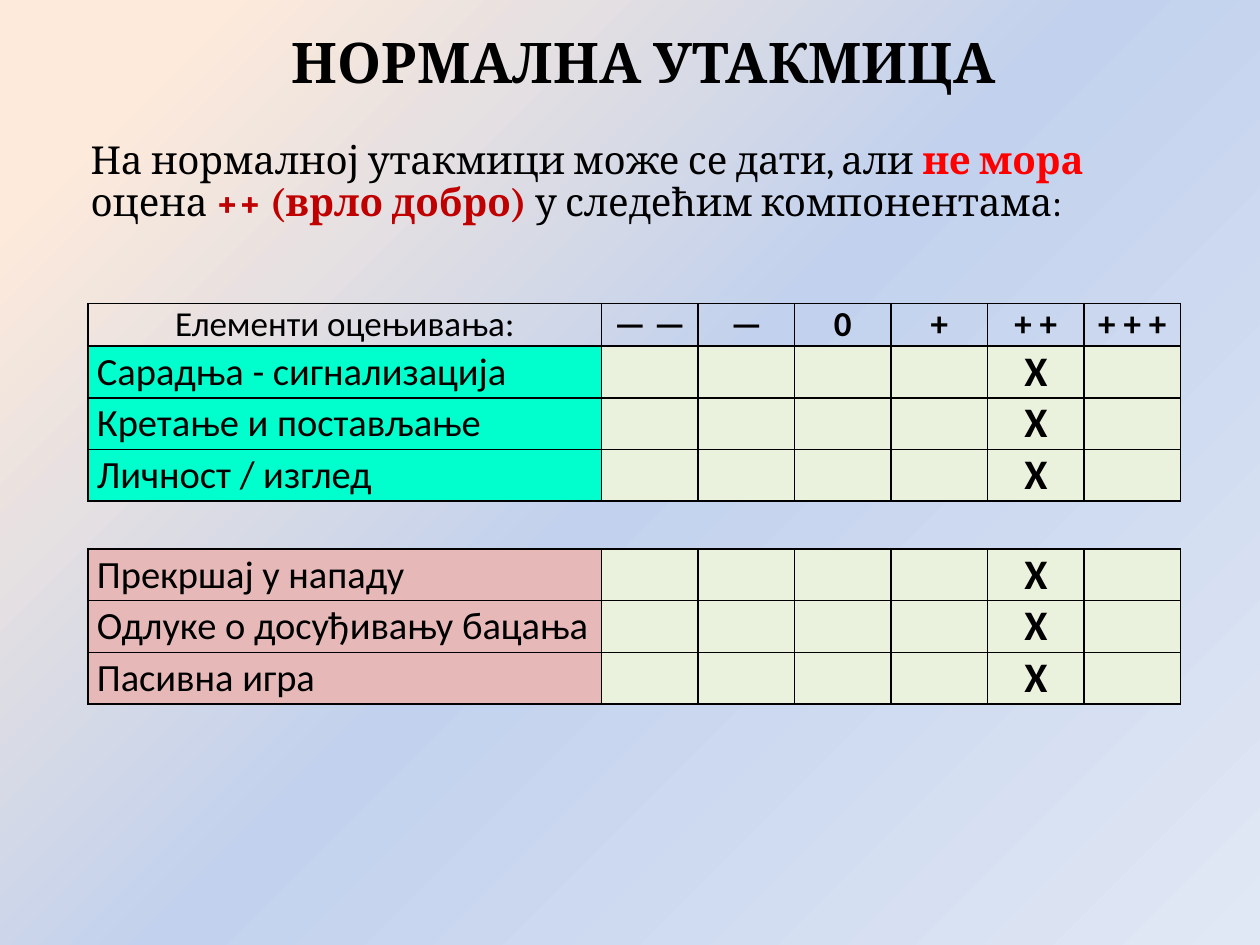
from copy import deepcopy

from lxml import etree
from pptx import Presentation
from pptx import util as u
from pptx.dml.color import RGBColor
from pptx.enum import text
from pptx.oxml import ns

BLACK = RGBColor(0x00, 0x00, 0x00)
RED = RGBColor(0xFF, 0x00, 0x00)
DARK_RED = RGBColor(0xC0, 0x00, 0x00)
TURQUOISE = RGBColor(0x00, 0xFF, 0xCC)
PINK = RGBColor(0xE6, 0xB9, 0xB8)
PALE_GREEN = RGBColor(0xEA, 0xF1, 0xDD)
BACKGROUND_STOPS = [
    (0.1, RGBColor(0xFD, 0xEA, 0xDA)),
    (0.5, RGBColor(0xC2, 0xD1, 0xED)),
    (1.0, RGBColor(0xE1, 0xE8, 0xF5)),
]

WIDTH, HEIGHT = u.Inches(10), u.Inches(7.5)
TEXT_LEFT, TEXT_WIDTH = 0.062, 0.898
TABLE_LEFT, TABLE_WIDTH = 0.07, 0.867
LABEL_SHARE = 0.47
HEADER_ROW, BODY_ROW = u.Inches(0.34), u.Inches(0.41)

GRADES = ["— —", "—", "0", "+", "+ +", "+ + +"]
MARKED_GRADE = GRADES.index("+ +")


def box(left, top, width, height):
    """Turn shares of the slide's size into lengths."""
    return [int(left * WIDTH), int(top * HEIGHT), int(width * WIDTH), int(height * HEIGHT)]


def set_font(font, name, size, bold=False):
    font.name, font.size, font.bold = name, u.Pt(size), bold
    font.color.rgb = BLACK


def paint_background(slide):
    fill = slide.background.fill
    fill.gradient()
    fill.gradient_angle = 315
    stop_list = slide.element.find(".//" + ns.qn("a:gsLst"))
    stop_list.append(deepcopy(stop_list[-1]))
    for stop, (position, color) in zip(fill.gradient_stops, BACKGROUND_STOPS):
        stop.position = position
        stop.color.rgb = color


def place_title(slide, area, wording):
    title = slide.shapes.title
    title.left, title.top, title.width, title.height = area
    frame = title.text_frame
    frame.text = wording
    frame.vertical_anchor = text.MSO_ANCHOR.MIDDLE
    paragraph = frame.paragraphs[0]
    paragraph.alignment = text.PP_ALIGN.CENTER
    set_font(paragraph.font, "Cambria", 32, bold=True)


def add_introduction(slide, area, parts):
    frame = slide.shapes.add_textbox(*area).text_frame
    frame.word_wrap = True
    paragraph = frame.paragraphs[0]
    paragraph.line_spacing = 0.9
    set_font(paragraph.font, "Cambria", 22)
    for wording, color in parts:
        run = paragraph.add_run()
        run.text = wording
        set_font(run.font, "Cambria", 22, bold=color != BLACK)
        run.font.color.rgb = color


def add_borders(cell):
    properties = cell._tc.get_or_add_tcPr()
    for index, side in enumerate(("lnL", "lnR", "lnT", "lnB")):
        line = etree.Element(ns.qn("a:" + side), w=str(u.Pt(1)))
        fill = etree.SubElement(line, ns.qn("a:solidFill"))
        etree.SubElement(fill, ns.qn("a:srgbClr"), val=str(BLACK))
        properties.insert(index, line)


def format_cell(cell, wording, size, bold, centred, color):
    cell.margin_left = cell.margin_right = u.Inches(0.07)
    cell.margin_top = cell.margin_bottom = 0
    cell.vertical_anchor = text.MSO_ANCHOR.MIDDLE
    cell.text = wording
    paragraph = cell.text_frame.paragraphs[0]
    if centred:
        paragraph.alignment = text.PP_ALIGN.CENTER
    set_font(paragraph.font, "Calibri", size, bold)
    if color is None:
        cell.fill.background()
    else:
        cell.fill.solid()
        cell.fill.fore_color.rgb = color
    add_borders(cell)


def add_grade_table(slide, left, top, width, labels, label_color, heading=None):
    """Place one block of elements, each marked in the same grade column."""
    first = 1 if heading else 0
    row_heights = [HEADER_ROW] * first + [BODY_ROW] * len(labels)
    table = slide.shapes.add_table(
        len(row_heights), 1 + len(GRADES), left, top, width, sum(row_heights)
    ).table
    table.first_row = bool(heading)
    table.horz_banding = False
    for row, height in zip(table.rows, row_heights):
        row.height = height
    table.columns[0].width = int(width * LABEL_SHARE)
    for column in range(1, 1 + len(GRADES)):
        table.columns[column].width = int(width * (1 - LABEL_SHARE) / len(GRADES))

    # Heading row
    if heading:
        for column, wording in enumerate([heading] + GRADES):
            format_cell(table.cell(0, column), wording, 20, column > 0, True, None)

    # Elements and their marks
    for row, label in enumerate(labels, start=first):
        format_cell(table.cell(row, 0), label, 22, False, False, label_color)
        for grade in range(len(GRADES)):
            mark = "Х" if grade == MARKED_GRADE else ""
            format_cell(table.cell(row, grade + 1), mark, 24, True, True, PALE_GREEN)


def main():
    presentation = Presentation()
    presentation.slide_width, presentation.slide_height = WIDTH, HEIGHT
    slide = presentation.slides.add_slide(presentation.slide_layouts[5])
    paint_background(slide)

    place_title(slide, box(TEXT_LEFT, 0.02, TEXT_WIDTH, 0.09), "НОРМАЛНА УТАКМИЦА")
    add_introduction(slide, box(TEXT_LEFT, 0.143, TEXT_WIDTH, 0.136), [
        ("На нормалној утакмици може се дати, али ", BLACK),
        ("не мора ", RED),
        ("оцена ", BLACK),
        ("++ (врло добро) ", DARK_RED),
        ("у следећим компонентама:", BLACK),
    ])

    left, top, width, _ = box(TABLE_LEFT, 0.321, TABLE_WIDTH, 0)
    add_grade_table(
        slide, left, top, width,
        ["Сарадња - сигнализација", "Кретање и постављање", "Личност / изглед"],
        TURQUOISE, heading="Елементи оцењивања:",
    )
    left, top, width, _ = box(TABLE_LEFT, 0.581, TABLE_WIDTH, 0)
    add_grade_table(
        slide, left, top, width,
        ["Прекршај у нападу", "Одлуке о досуђивању бацања", "Пасивна игра"],
        PINK,
    )
    presentation.save("out.pptx")


if __name__ == "__main__":
    main()
